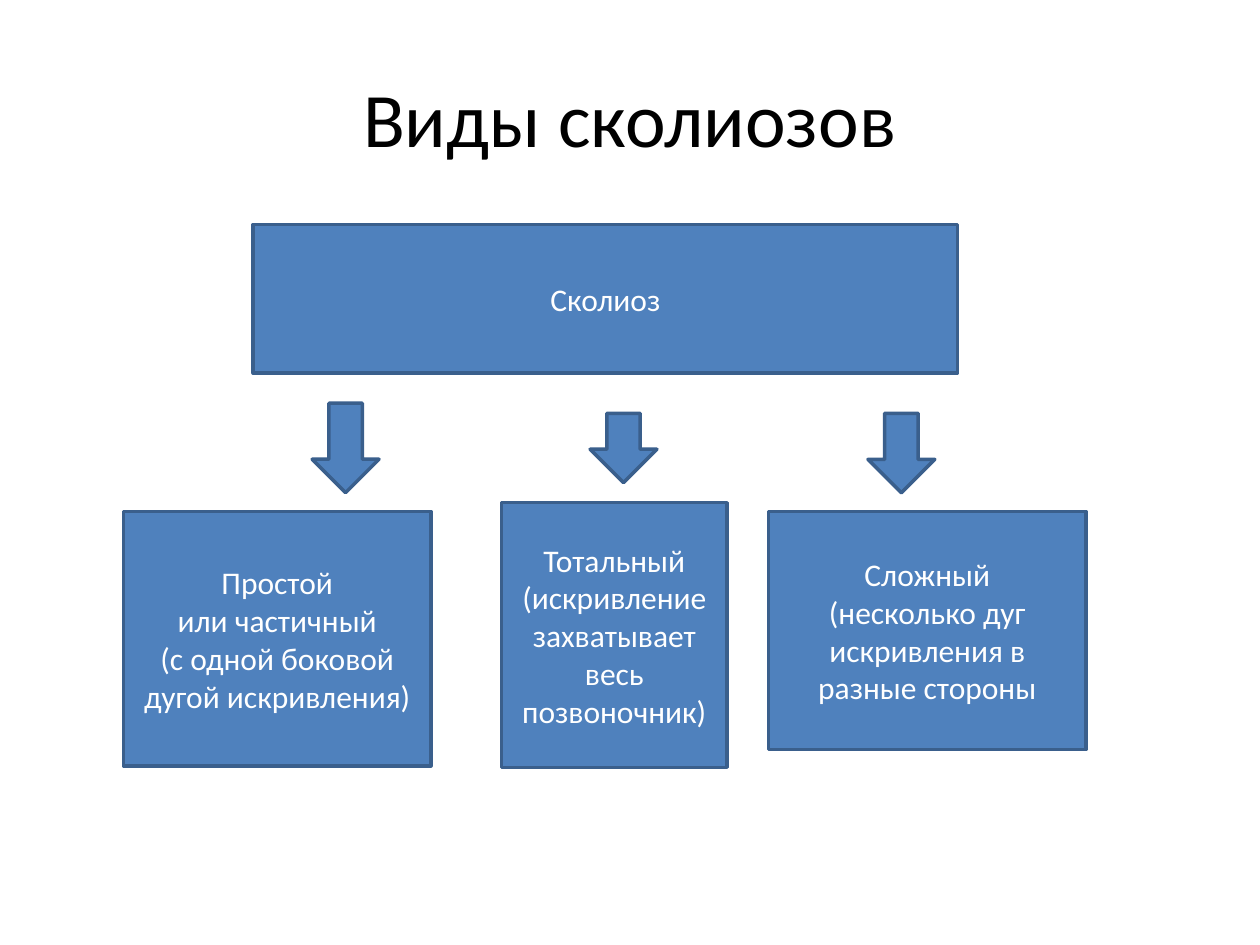
from pptx import Presentation
from pptx.dml.color import RGBColor
from pptx.enum.shapes import MSO_SHAPE
from pptx.enum.text import MSO_ANCHOR, PP_ALIGN
from pptx.util import Pt

RECT, DOWN_ARROW = MSO_SHAPE.RECTANGLE, MSO_SHAPE.DOWN_ARROW
MIDDLE, CENTER = MSO_ANCHOR.MIDDLE, PP_ALIGN.CENTER
BLACK = RGBColor(0x00, 0x00, 0x00)
WHITE = RGBColor(0xFF, 0xFF, 0xFF)
BLUE = RGBColor(0x4F, 0x81, 0xBD)
DARK_BLUE = RGBColor(0x3A, 0x5F, 0x8C)

TITLE_FONT = {"name": "Calibri", "size": Pt(44)}
BOX_FONT = {"name": "Calibri", "size": Pt(18)}
FRAME = {"word_wrap": True, "vertical_anchor": MIDDLE}

BOXES = [
    ((144.7, 128.2, 402.5, 85), ["Сколиоз"]),
    ((439.2, 292.3, 181.4, 136.1),
     ["Сложный", "(несколько дуг искривления в разные стороны"]),
    ((70.6, 292.3, 175.7, 145.4),
     ["Простой", "или частичный", "(с одной боковой дугой искривления)"]),
    ((286.6, 287.3, 128.9, 151.2),
     ["Тотальный (искривление захватывает весь позвоночник)"]),
]
ARROW_LEFT, ARROW_STEP, ARROW_WIDTH = 178.4, 158.8, 38.2
ARROWS = [(230.4, 51.1), (236.2, 39.6), (236.2, 45.4)]


class Deck:
    """Holds the presentation, the current slide and the style of its elements."""

    def __init__(self, width, height):
        self.prs = Presentation()
        self.prs.slide_width, self.prs.slide_height = Pt(width), Pt(height)
        self.s = self.prs.slides.add_slide(self.prs.slide_layouts[6])

    def format(self, target, values):
        for name, value in values.items():
            setattr(target, name, value)

    def text(self, tf, lines, font, color):
        self.format(tf, FRAME)
        for i, line in enumerate(lines):
            p = tf.paragraphs[0] if i == 0 else tf.add_paragraph()
            p.alignment = CENTER
            r = p.add_run()
            r.text = line
            self.format(r.font, font)
            r.font.color.rgb = color

    def title(self, box, line):
        sp = self.s.shapes.add_textbox(*map(Pt, box))
        self.text(sp.text_frame, [line], TITLE_FONT, BLACK)

    def shape(self, kind, box):
        sp = self.s.shapes.add_shape(kind, *map(Pt, box))
        sp.shadow.inherit = False
        sp.fill.solid()
        sp.fill.fore_color.rgb = BLUE
        sp.line.color.rgb = DARK_BLUE
        sp.line.width = Pt(2)
        return sp

    def box(self, box, lines):
        sp = self.shape(RECT, box)
        self.text(sp.text_frame, lines, BOX_FONT, WHITE)

    def arrow(self, box):
        self.shape(DOWN_ARROW, box)


def main():
    deck = Deck(720, 540)
    deck.title((36, 21.6, 648, 90), "Виды сколиозов")
    for box, lines in BOXES:
        deck.box(box, lines)
    for i, (top, height) in enumerate(ARROWS):
        deck.arrow((ARROW_LEFT + i * ARROW_STEP, top, ARROW_WIDTH, height))
    deck.prs.save("out.pptx")


if __name__ == "__main__":
    main()
